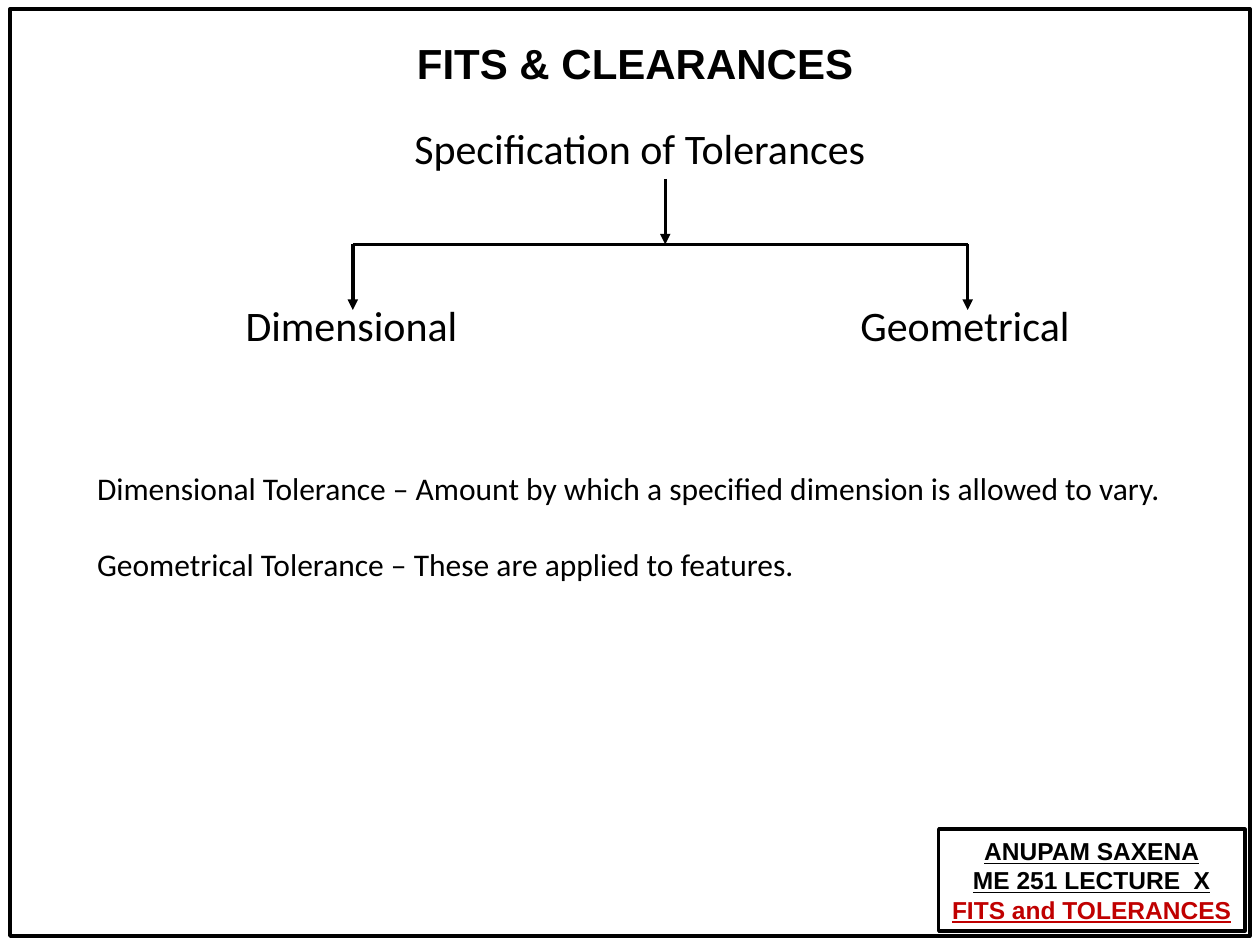
from lxml import etree
from pptx import Presentation
from pptx.dml.color import RGBColor
from pptx.enum.shapes import MSO_CONNECTOR, MSO_SHAPE
from pptx.enum.text import MSO_ANCHOR, MSO_AUTO_SIZE, PP_ALIGN
from pptx.oxml.ns import qn
from pptx.util import Inches, Pt

STRAIGHT = MSO_CONNECTOR.STRAIGHT
RECTANGLE = MSO_SHAPE.RECTANGLE
TOP, MIDDLE = MSO_ANCHOR.TOP, MSO_ANCHOR.MIDDLE
NO_FIT = MSO_AUTO_SIZE.NONE
LEFT, CENTER = PP_ALIGN.LEFT, PP_ALIGN.CENTER
COLORS = {"ink": "000000", "accent": "C00000"}

deck = Presentation()
deck.slide_width = Inches(10)
deck.slide_height = Inches(7.5)
column = deck.slide_width / 100
row = deck.slide_height / 75
page = deck.slides.add_slide(deck.slide_layouts[1])


def place(box, left, top, width, height):
    box.left, box.top = round(left * column), round(top * row)
    box.width, box.height = round(width * column), round(height * row)


def write(box, lines, font_name, size, align=LEFT, anchor=TOP, wrap=True, bold=False):
    frame = box.text_frame
    frame.text = "\n".join(lines)
    frame.auto_size = NO_FIT
    frame.word_wrap = wrap
    frame.vertical_anchor = anchor
    for para in frame.paragraphs:
        para.alignment = align
        para.space_before = Pt(0)
        for span in para.runs:
            span.font.name = font_name
            span.font.size = Pt(size)
            span.font.bold = bold
            span.font.color.rgb = RGBColor.from_string(COLORS["ink"])
    return frame.paragraphs


title = page.shapes.title
place(title, 31.9, 2.5, 37, 5)
write(title, ["FITS & CLEARANCES"], "Arial", 24, CENTER, TOP, False, True)

frames = []
for area in [(0.8, 0.7, 98.4, 73.6), (74.5, 65.8, 24.3, 8.1)]:
    frame_box = page.shapes.add_shape(RECTANGLE, 0, 0, 0, 0)
    place(frame_box, *area)
    frame_box.shadow.inherit = False
    frame_box.fill.background()
    frame_box.line.color.rgb = RGBColor.from_string(COLORS["ink"])
    frame_box.line.width = Pt(2)
    frames.append(frame_box)

lecture_lines = ["ANUPAM SAXENA", "ME 251 LECTURE  X", "FITS and TOLERANCES"]
lecture = write(frames[1], lecture_lines, "Arial", 14, CENTER, MIDDLE, False, True)
for para in lecture:
    para.runs[0].font.underline = True
lecture[-1].runs[0].font.color.rgb = RGBColor.from_string(COLORS["accent"])

stem, branches = 52.8, (28, 76.8)
stem_top, fork, branch_end = 14.2, 19.4, 24.6
labels = [("Specification of Tolerances", 31.9, 9.2, 41.7)]
for text, center in zip(("Dimensional", "Geometrical"), branches):
    labels.append((text, center - 9.5, 23.3, 18.9))
for text, left, top, width in labels:
    label = page.shapes.add_textbox(0, 0, 0, 0)
    place(label, left, top, width, 5)
    write(label, [text], "Calibri", 24)

tree_lines = [(stem, stem_top, stem, fork, True), (branches[0], fork, branches[1], fork, False)]
tree_lines += [(center, fork, center, branch_end, True) for center in branches]
for start_x, start_y, end_x, end_y, has_arrow in tree_lines:
    connector = page.shapes.add_connector(
        STRAIGHT,
        round(start_x * column), round(start_y * row),
        round(end_x * column), round(end_y * row),
    )
    connector.line.color.rgb = RGBColor.from_string(COLORS["ink"])
    connector.line.width = Pt(2)
    if has_arrow:
        etree.SubElement(connector.line._get_or_add_ln(), qn("a:tailEnd"), type="triangle")
    etree.SubElement(connector._element.spPr, qn("a:effectLst"))

definitions = page.placeholders[1]
place(definitions, 6.7, 36.7, 89, 13.1)
definition_paras = write(definitions, [
    "Dimensional Tolerance – Amount by which a specified dimension is allowed to vary.",
    "Geometrical Tolerance – These are applied to features.",
], "Calibri", 18)
for para in definition_paras:
    properties = para._p.get_or_add_pPr()
    properties.set("marL", "0")
    properties.set("indent", "0")
    etree.SubElement(properties, qn("a:buNone"))
definition_paras[1].space_before = Pt(22)

deck.save("out.pptx")
